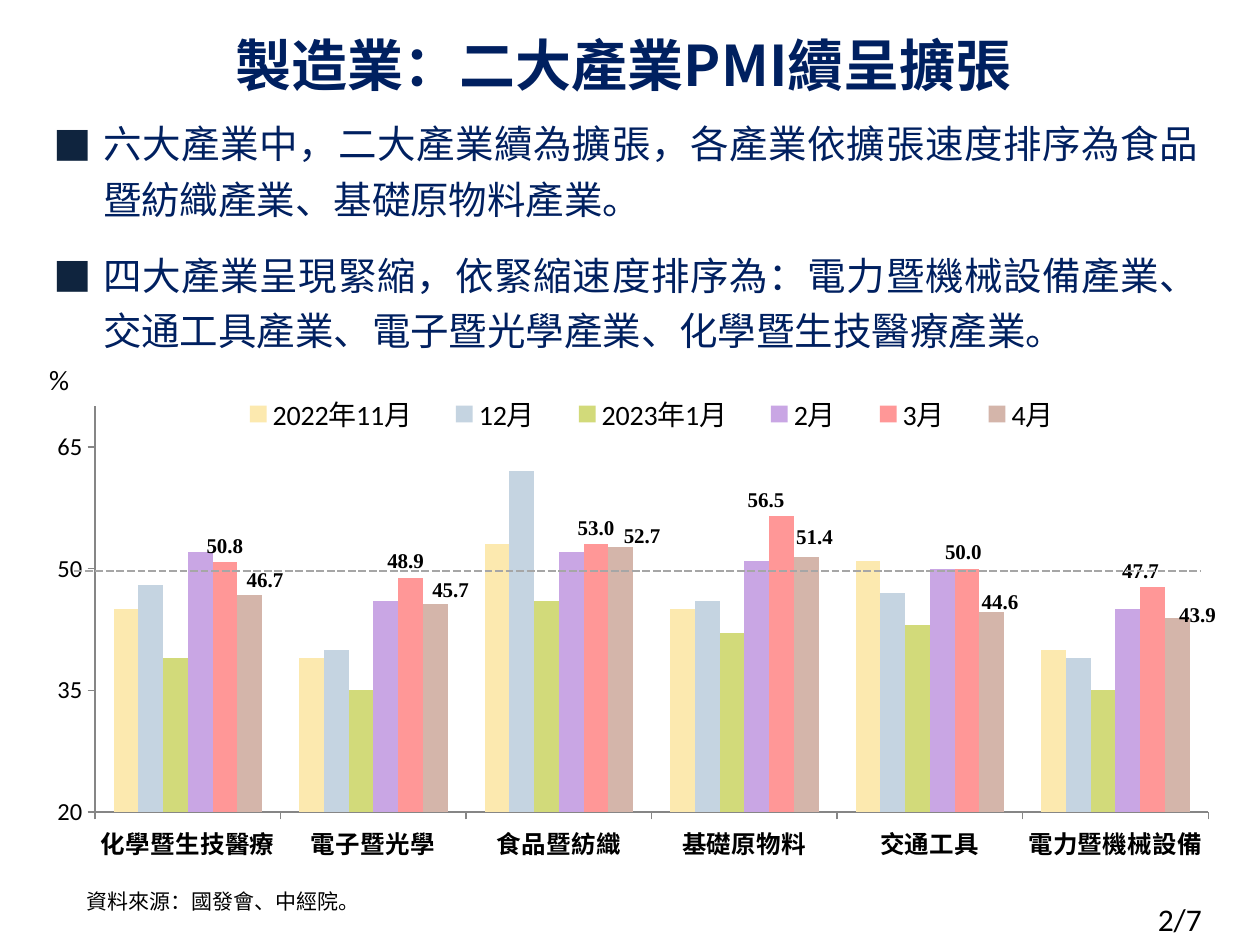
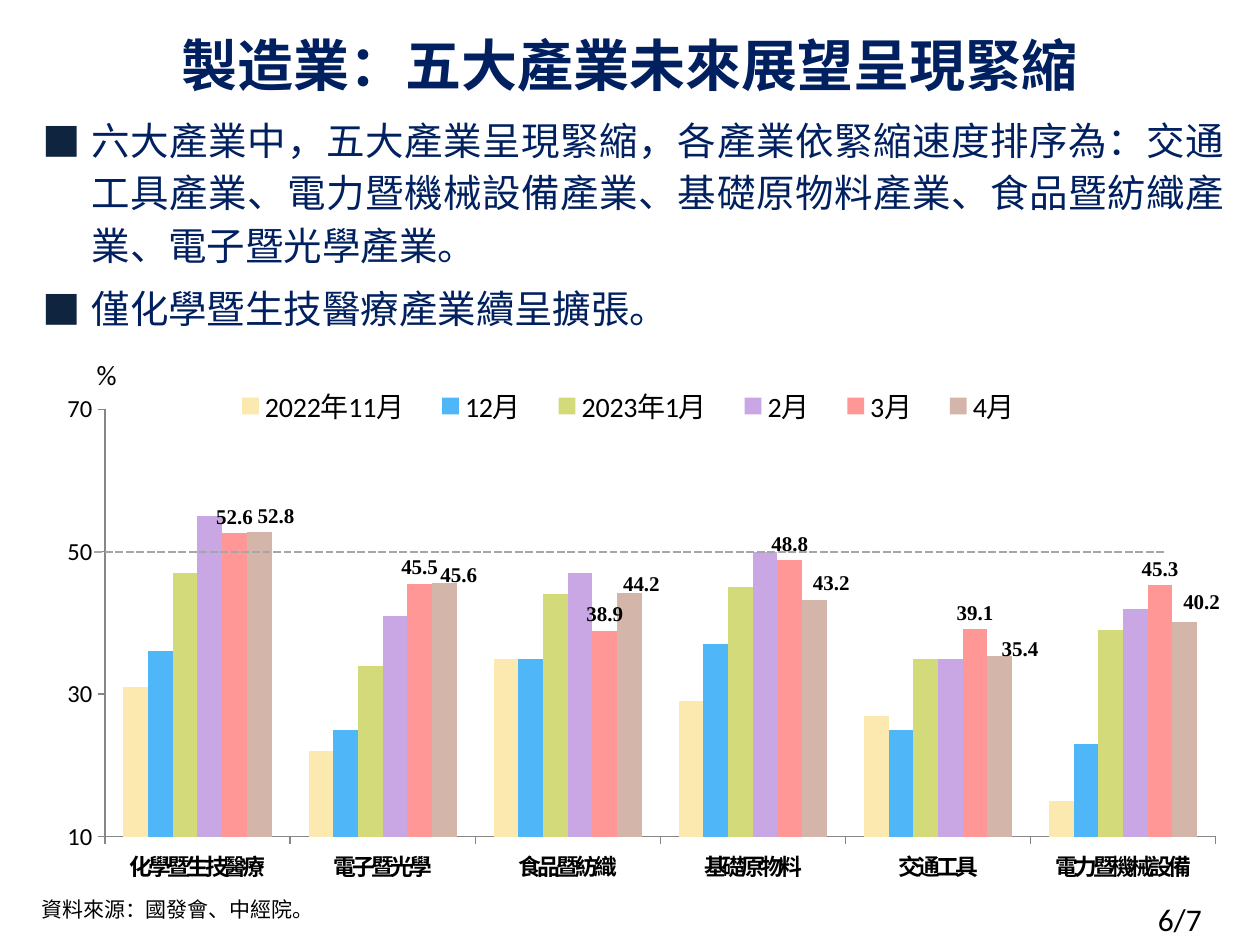
from lxml import etree
from pptx import Presentation, util as u
from pptx.chart.data import CategoryChartData
from pptx.dml.color import RGBColor
from pptx.enum import chart as ch, dml, shapes, text
from pptx.oxml import parse_xml
from pptx.oxml.ns import nsdecls, qn

HUES = {
    "navy": "002060", "mark": "0F243E", "black": "000000",
    "dash": "A6A6A6", "axis": "868686",
}
BARS = ["FCE9AF", "C5D4E1", "D2DA7A", "C9A6E4", "FF9797", "D4B5AA"]
MONTHS = ["2022年11月", "12月", "2023年1月", "2月", "3月", "4月"]
TRADES = ["化學暨生技醫療", "電子暨光學", "食品暨紡織", "基礎原物料", "交通工具", "電力暨機械設備"]
SANS, BODY, SERIF = "Noto Sans CJK SC", "Calibri", "Times New Roman"

TITLE = {"name": SANS, "size": u.Pt(32), "bold": True, "color": "navy"}
POINT = {"name": SANS, "size": u.Pt(22), "color": "navy"}
SOURCE = {"name": "Noto Sans CJK JP", "size": u.Pt(12), "color": "black"}
UNIT = {"name": BODY, "size": u.Pt(16), "color": "black"}
PAGE = {"name": BODY, "size": u.Pt(18), "color": "black"}
TICK = {"name": BODY, "size": u.Pt(14), "bold": False, "color": "black"}
LABEL = {"name": SERIF, "size": u.Pt(12), "bold": True, "color": "black"}


def rgb(hue):
    return RGBColor.from_string(HUES.get(hue, hue))


def style(font, look):
    for key, val in look.items():
        if key == "color":
            font.color.rgb = rgb(val)
        else:
            setattr(font, key, val)


def asian(root):
    for latin in root.findall(".//" + qn("a:latin")):
        if latin.get("typeface").startswith("Noto"):
            east = etree.Element(qn("a:ea"), typeface=latin.get("typeface"))
            latin.addnext(east)


def cms(box):
    return [u.Cm(n) for n in box]


def write(shape, lines, look, **form):
    frame = shape.text_frame
    frame.word_wrap = True
    frame.vertical_anchor = form.pop("anchor", text.MSO_ANCHOR.TOP)
    for i, line in enumerate(lines):
        para = frame.add_paragraph() if i else frame.paragraphs[0]
        for key, val in form.items():
            setattr(para, key, val)
        run = para.add_run()
        run.text = line
        style(run.font, look)
    asian(shape._element)
    return frame


def label(slide, box, line, look, **form):
    return write(slide.shapes.add_textbox(*cms(box)), [line], look, **form)


def points(slide, box, lines, lead, gaps):
    shape = slide.shapes.add_shape(shapes.MSO_SHAPE.ROUNDED_RECTANGLE, *cms(box))
    shape.shadow.inherit = False
    shape.fill.background()
    shape.line.fill.background()
    frame = write(shape, lines, POINT, alignment=text.PP_ALIGN.JUSTIFY, line_spacing=lead)
    frame.margin_top = frame.margin_bottom = 0
    for para, gap in zip(frame.paragraphs, gaps):
        para.space_before = u.Pt(gap)
        props = para._p.get_or_add_pPr()
        props.set("marL", str(u.Cm(1.25)))
        props.set("indent", str(u.Cm(-1)))
        props.append(parse_xml(
            f'<a:buClr {nsdecls("a")}><a:srgbClr val="{HUES["mark"]}"/></a:buClr>'))
        props.append(parse_xml(f'<a:buFont {nsdecls("a")} typeface="{SANS}"/>'))
        props.append(parse_xml(f'<a:buChar {nsdecls("a")} char="■"/>'))


def layout(rect, inner=False):
    tags = '<c:layoutTarget val="inner"/>' if inner else ""
    tags += '<c:xMode val="edge"/><c:yMode val="edge"/>'
    tags += "".join(f'<c:{k} val="{v}"/>' for k, v in zip("xywh", rect))
    return parse_xml(f'<c:layout {nsdecls("c")}><c:manualLayout>{tags}</c:manualLayout></c:layout>')


def place(host, rect, after=None, inner=False):
    for old in host.findall(qn("c:layout")):
        host.remove(old)
    if after is None:
        host.insert(0, layout(rect, inner))
    else:
        host.find(qn(after)).addnext(layout(rect, inner))


def nudge(series, moves):
    for i, (x, y) in enumerate(moves):
        tag = series.points[i].data_label
        style(tag.font, LABEL)
        tag.position = ch.XL_LABEL_POSITION.OUTSIDE_END
        node = series._element.findall(".//" + qn("c:dLbl"))[i]
        node.find(qn("c:idx")).addnext(parse_xml(
            f'<c:layout {nsdecls("c")}><c:manualLayout><c:x val="{x / 1000}"/>'
            f'<c:y val="{y / 1000}"/></c:manualLayout></c:layout>'))
        node.find(qn("c:layout")).addnext(parse_xml(
            f'<c:numFmt {nsdecls("c")} formatCode="0.0" sourceLinked="0"/>'))


def axes(graph, span, size, squeeze):
    low, high, step = span
    val, cat = graph.value_axis, graph.category_axis
    val.minimum_scale, val.maximum_scale, val.major_unit = low, high, step
    val.has_major_gridlines = False
    val.tick_labels.number_format = "0"
    val.tick_labels.number_format_is_linked = False
    style(val.tick_labels.font, TICK)
    style(cat.tick_labels.font, {**TICK, "name": SANS, "bold": True, "size": u.Pt(size)})
    if squeeze:
        cat._element.find(".//" + qn("a:defRPr")).set("spc", str(squeeze))
    for axis in (val, cat):
        axis.major_tick_mark = ch.XL_TICK_MARK.OUTSIDE
        axis.format.line.color.rgb = rgb("axis")
        axis.format.line.width = u.Pt(0.75)


def bars(slide, box, rows, hues, plot, key, moves, **scale):
    data = CategoryChartData()
    data.categories = TRADES
    for month, row in zip(MONTHS, rows):
        data.add_series(month, row, "0.0")
    graph = slide.shapes.add_chart(ch.XL_CHART_TYPE.COLUMN_CLUSTERED, *cms(box), data).chart
    style(graph.font, PAGE)
    graph.has_title = False
    graph.has_legend = True
    graph.legend.position = ch.XL_LEGEND_POSITION.TOP
    graph.legend.include_in_layout = False
    style(graph.legend.font, UNIT)
    group = graph.plots[0]
    group.gap_width, group.overlap, group.vary_by_categories = 150, 0, False
    for series, hue in zip(group.series, hues):
        series.format.fill.solid()
        series.format.fill.fore_color.rgb = rgb(hue)
        series.invert_if_negative = False
    for series, shift in zip(list(group.series)[-2:], moves):
        nudge(series, shift)
    axes(graph, **scale)
    root = graph._chartSpace
    place(root.find(".//" + qn("c:plotArea")), plot, inner=True)
    place(root.find(".//" + qn("c:legend")), key, after="c:legendPos")
    asian(root)


def rule(slide, left, right, y):
    line = slide.shapes.add_connector(
        shapes.MSO_CONNECTOR.STRAIGHT, *cms((left, y, right, y)))
    line.line.color.rgb = rgb("dash")
    line.line.width = u.Pt(1.5)
    line.line.dash_style = dml.MSO_LINE.SQUARE_DOT
    line._element.spPr.append(parse_xml(f'<a:effectLst {nsdecls("a")}/>'))


def page(deck, title, number, notes, graph, mean, unit, source):
    slide = deck.slides.add_slide(deck.slide_layouts[6])
    label(slide, (23.09, 18.01, 2.31, 1.02), number, PAGE)
    bars(slide, **graph)
    rule(slide, *mean)
    label(slide, (*source, 24.87, 0.69), "資料來源：國發會、中經院。", SOURCE,
          line_spacing=u.Pt(12), space_before=u.Pt(2))
    label(slide, (0, 0, 25.4, 2.54), title, TITLE, anchor=text.MSO_ANCHOR.MIDDLE,
          alignment=text.PP_ALIGN.CENTER, line_spacing=u.Pt(40))
    points(slide, **notes)
    label(slide, (*unit, 1.6, 0.94), "%", UNIT)


def main():
    deck = Presentation()
    deck.slide_width, deck.slide_height = u.Cm(25.4), u.Cm(19.05)
    page(
        deck, "製造業：二大產業PMI續呈擴張 ", "2/7",
        notes={
            "box": (0.3, 1.96, 24.41, 5.72), "lead": 1.2, "gaps": (6, 12),
            "lines": [
                "六大產業中，二大產業續為擴張，各產業依擴張速度排序為食品暨紡織產業、基礎原物料產業。",
                "四大產業呈現緊縮，依緊縮速度排序為：電力暨機械設備產業、交通工具產業、電子暨光學產業、化學暨生技醫療產業。",
            ],
        },
        graph={
            "box": (0.71, 7.44, 24.13, 10.06), "hues": BARS,
            "rows": [
                (45, 39, 53, 45, 51, 40), (48, 40, 62, 46, 47, 39),
                (39, 35, 46, 42, 43, 35), (52, 46, 52, 51, 50, 45),
                (50.8, 48.9, 53, 56.5, 50, 47.7), (46.7, 45.7, 52.7, 51.4, 44.6, 43.9),
            ],
            "plot": (0.05, 0.075, 0.93, 0.813), "key": (0.15, 0.05, 0.73, 0.08),
            "moves": [
                [(0, 0), (-4, 0), (0, 0), (-13, 0), (-3, 0), (-10, 0)],
                [(13, 2), (13, 6), (18, 12), (7, -8), (7, 12), (17, 26)],
            ],
            "span": (20, 70, 15), "size": 14, "squeeze": 0,
        },
        mean=(1.5, 24.21, 11.51), unit=(0.74, 7.19), source=(1.5, 17.88))
    page(
        deck, "製造業：五大產業未來展望呈現緊縮", "6/7",
        notes={
            "box": (0.1, 1.98, 25.1, 5.11), "lead": u.Pt(30), "gaps": (6, 6),
            "lines": [
                "六大產業中，五大產業呈現緊縮，各產業依緊縮速度排序為：交通工具產業、電力暨機械設備產業、基礎原物料產業、食品暨紡織產業、電子暨光學產業。",
                "僅化學暨生技醫療產業續呈擴張。",
            ],
        },
        graph={
            "box": (0.66, 7.09, 24.26, 10.95), "hues": [BARS[0], "4FB7F7", *BARS[2:]],
            "rows": [
                (31, 22, 35, 29, 27, 15), (36, 25, 35, 37, 25, 23),
                (47, 34, 44, 45, 35, 39), (55, 41, 47, 50, 35, 42),
                (52.6, 45.5, 38.9, 48.8, 39.1, 45.3), (52.8, 45.6, 44.2, 43.2, 35.4, 40.2),
            ],
            "plot": (0.06, 0.106, 0.923, 0.787), "key": (0.15, 0.06, 0.69, 0.08),
            "moves": [
                [(0, 0)] * 6,
                [(14, 2), (12, 15), (10, 13), (14, -2), (17, 18), (14, -6)],
            ],
            "span": (10, 70, 20), "size": 13, "squeeze": -200,
        },
        mean=(1.9, 23.5, 11.13), unit=(1.7, 7.09), source=(0.58, 18.03))
    deck.save("out.pptx")


if __name__ == "__main__":
    main()
